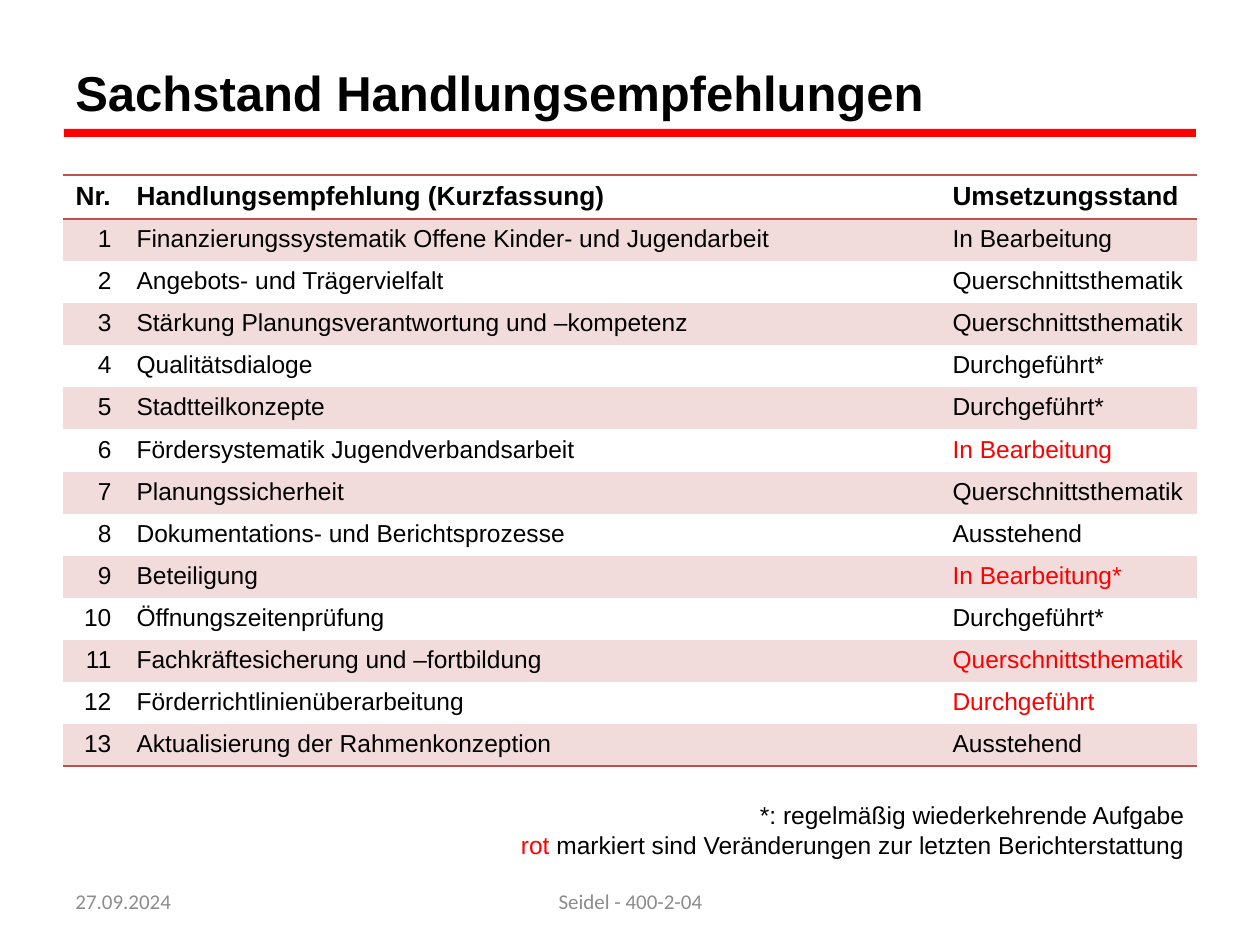
from lxml import etree
from pptx import Presentation
from pptx.dml.color import RGBColor
from pptx.enum.shapes import MSO_SHAPE
from pptx.enum.text import MSO_ANCHOR, PP_ALIGN
from pptx.oxml import parse_xml
from pptx.oxml.ns import nsdecls, qn
from pptx.util import Emu, Pt

LEFT, CENTER, RIGHT = PP_ALIGN.LEFT, PP_ALIGN.CENTER, PP_ALIGN.RIGHT
TOP, MIDDLE = MSO_ANCHOR.TOP, MSO_ANCHOR.MIDDLE
RECTANGLE = MSO_SHAPE.RECTANGLE

PX = 914400 / 126
BLACK = RGBColor(0x00, 0x00, 0x00)
RED = RGBColor(0xFF, 0x00, 0x00)
GRAY = RGBColor(0x8C, 0x8C, 0x8C)
BAND = RGBColor(0xF2, 0xDC, 0xDB)
RULE = RGBColor(0xC0, 0x50, 0x4D)
NO_STYLE_NO_GRID = "{2D5ABB26-0587-4C30-8999-92F81FD0307C}"

HEADER = ("Nr.", "Handlungsempfehlung (Kurzfassung)", "Umsetzungsstand")
# Recommendation, status, changed since the last report
RECOMMENDATIONS = [
    ("Finanzierungssystematik Offene Kinder- und Jugendarbeit", "In Bearbeitung", False),
    ("Angebots- und Trägervielfalt", "Querschnittsthematik", False),
    ("Stärkung Planungsverantwortung und –kompetenz", "Querschnittsthematik", False),
    ("Qualitätsdialoge", "Durchgeführt*", False),
    ("Stadtteilkonzepte", "Durchgeführt*", False),
    ("Fördersystematik Jugendverbandsarbeit", "In Bearbeitung", True),
    ("Planungssicherheit", "Querschnittsthematik", False),
    ("Dokumentations- und Berichtsprozesse", "Ausstehend", False),
    ("Beteiligung", "In Bearbeitung*", True),
    ("Öffnungszeitenprüfung", "Durchgeführt*", False),
    ("Fachkräftesicherung und –fortbildung", "Querschnittsthematik", True),
    ("Förderrichtlinienüberarbeitung", "Durchgeführt", True),
    ("Aktualisierung der Rahmenkonzeption", "Ausstehend", False),
]


def format_text(tf, size, color=BLACK, bold=False, align=LEFT, font="Arial"):
    for p in tf.paragraphs:
        p.alignment = align
        for r in p.runs:
            r.font.name = font
            r.font.size = Pt(size)
            r.font.bold = bold
            r.font.color.rgb = color


def add_text(box, text, anchor, **style):
    """Add a wrapping text box at box (left, top, width, height in px)."""
    sp = slide.shapes.add_textbox(*(Emu(int(v * PX)) for v in box))
    tf = sp.text_frame
    tf.word_wrap = True
    tf.vertical_anchor = anchor
    tf.text = text
    format_text(tf, **style)
    return tf


prs = Presentation()
prs.slide_width = Emu(int(1260 * PX))
prs.slide_height = Emu(int(945 * PX))
slide = prs.slides.add_slide(prs.slide_layouts[6])

# Title, date and footer
add_text((63, 38, 1124, 107), "Sachstand Handlungsempfehlungen", MIDDLE, size=28, bold=True)
add_text((63, 876, 294, 50), "27.09.2024", MIDDLE, size=12, color=GRAY, font="Calibri")
add_text((431, 876, 399, 50), "Seidel - 400-2-04", MIDDLE,
         size=12, color=GRAY, align=CENTER, font="Calibri")

# Red bar under the title
bar = slide.shapes.add_shape(RECTANGLE, *(Emu(int(v * PX)) for v in (64, 129, 1132, 8)))
bar.shadow.inherit = False
bar.fill.solid()
bar.fill.fore_color.rgb = RED
bar.line.fill.background()

# Table of recommendations
rows = [(*HEADER, False)]
rows += [(str(n), *item) for n, item in enumerate(RECOMMENDATIONS, start=1)]
last = len(rows) - 1
frame = slide.shapes.add_table(len(rows), len(HEADER),
                               *(Emu(int(v * PX)) for v in (63, 175, 1134, 562)))
table = frame.table
table.horz_banding = False
etree.SubElement(table._tbl.tblPr, qn("a:tableStyleId")) if \
    table._tbl.tblPr.find(qn("a:tableStyleId")) is None else None
table._tbl.tblPr.find(qn("a:tableStyleId")).text = NO_STYLE_NO_GRID
for column, width in zip(table.columns, (61, 816, 257)):
    column.width = Emu(int(width * PX))

for i, (*texts, changed) in enumerate(rows):
    table.rows[i].height = Emu(int((42 if i == 0 else 40) * PX))
    edges = {0: ("lnT", "lnB"), last: ("lnB",)}.get(i, ())
    for j, text in enumerate(texts):
        cell = table.cell(i, j)
        cell.text = text
        format_text(cell.text_frame,
                    size=15 if i == 0 else 14,
                    bold=i == 0,
                    color=RED if changed and j == 2 else BLACK,
                    align=RIGHT if i > 0 and j == 0 else LEFT)
        for edge in edges:
            cell._tc.get_or_add_tcPr().append(parse_xml(
                f'<a:{edge} {nsdecls("a")} w="{Pt(1)}"><a:solidFill>'
                f'<a:srgbClr val="{RULE}"/></a:solidFill></a:{edge}>'))
        if i % 2:
            cell.fill.solid()
            cell.fill.fore_color.rgb = BAND
        else:
            cell.fill.background()

# Footnote
tf = add_text((471, 794, 726, 72), "*: regelmäßig wiederkehrende Aufgabe", TOP, size=14)
p = tf.add_paragraph()
for text in ("rot", " markiert sind Veränderungen zur letzten Berichterstattung"):
    p.add_run().text = text
format_text(tf, size=14, align=RIGHT)
p.runs[0].font.color.rgb = RED

prs.save("out.pptx")
